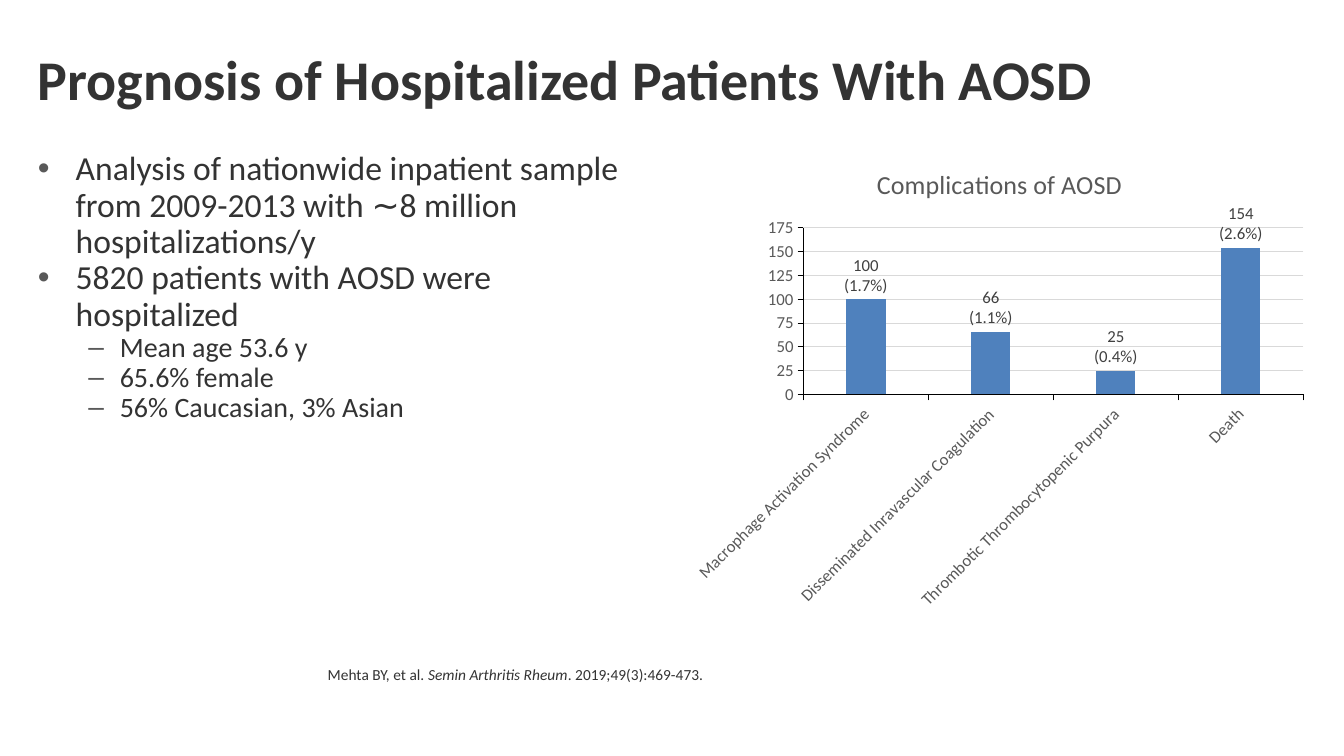
from lxml import etree
from pptx import Presentation
from pptx.chart.data import CategoryChartData
from pptx.dml.color import RGBColor
from pptx.enum.chart import XL_CHART_TYPE, XL_LABEL_POSITION, XL_TICK_MARK
from pptx.enum.text import MSO_ANCHOR
from pptx.oxml import parse_xml
from pptx.oxml.ns import nsdecls, qn
from pptx.util import Pt

COLUMN = XL_CHART_TYPE.COLUMN_CLUSTERED
ABOVE = XL_LABEL_POSITION.OUTSIDE_END
OUT = XL_TICK_MARK.OUTSIDE
NONE = XL_TICK_MARK.NONE
TOP = MSO_ANCHOR.TOP
MIDDLE = MSO_ANCHOR.MIDDLE


def color(code):
    return RGBColor.from_string(code)


class Deck:
    face = "Calibri"
    ink = "333333"
    gray = "595959"
    bar = "4F81BD"
    bullets = [("•", 27, 27, 24), ("–", 58.5, 22.5, 20)]

    def __init__(self, wide, high):
        self.show = Presentation()
        self.show.slide_width = Pt(wide)
        self.show.slide_height = Pt(high)
        self.slide = self.show.slides.add_slide(self.show.slide_layouts[6])

    def style(self, font, size, tint):
        font.name = self.face
        font.size = Pt(size)
        font.color.rgb = color(tint)

    def frame(self, box, anchor=TOP):
        frame = self.slide.shapes.add_textbox(*map(Pt, box)).text_frame
        frame.word_wrap = True
        frame.vertical_anchor = anchor
        return frame

    def put(self, para, text, size, bold=False, italic=False):
        para.line_spacing = 0.9
        run = para.add_run()
        run.text = text
        self.style(run.font, size, self.ink)
        run.font.bold = bold
        run.font.italic = italic

    def title(self, box, text):
        self.put(self.frame(box, MIDDLE).paragraphs[0], text, 40, bold=True)

    def bullet(self, para, level):
        mark, left, hang, size = self.bullets[level]
        para.level = level
        props = para._p.get_or_add_pPr()
        props.set("marL", str(Pt(left)))
        props.set("indent", str(-Pt(hang)))
        tint = etree.SubElement(props, qn("a:buClr"))
        etree.SubElement(tint, qn("a:srgbClr"), val=self.gray)
        etree.SubElement(props, qn("a:buFont"), typeface="Arial")
        etree.SubElement(props, qn("a:buChar"), char=mark)
        return size

    def list(self, box, items):
        frame = self.frame(box)
        for i, (level, text) in enumerate(items):
            para = frame.add_paragraph() if i else frame.paragraphs[0]
            size = self.bullet(para, level)
            self.put(para, text, size)

    def cite(self, box, parts):
        para = self.frame(box).paragraphs[0]
        for text, italic in parts:
            self.put(para, text, 11, italic=italic)

    def axis(self, axis):
        self.style(axis.tick_labels.font, 12, self.gray)
        axis.major_tick_mark = OUT
        axis.minor_tick_mark = NONE
        axis.format.line.color.rgb = color("000000")
        axis.format.line.width = Pt(0.75)

    def label(self, point, lines):
        label = point.data_label
        frame = label.text_frame
        for i, text in enumerate(lines):
            para = frame.add_paragraph() if i else frame.paragraphs[0]
            run = para.add_run()
            run.text = text
            self.style(run.font, 12, "404040")
        label.position = ABOVE

    def place(self, chart, **share):
        parts = "".join(f'<c:{k} val="{v}"/>' for k, v in share.items())
        layout = parse_xml(
            f'<c:layout {nsdecls("c")}><c:manualLayout>'
            '<c:layoutTarget val="inner"/><c:xMode val="edge"/>'
            f'<c:yMode val="edge"/>{parts}</c:manualLayout></c:layout>')
        area = chart._chartSpace.find(".//" + qn("c:plotArea"))
        for old in area.findall(qn("c:layout")):
            area.remove(old)
        area.insert(0, layout)

    def chart(self, box, head, rows):
        data = CategoryChartData()
        data.categories = [name for name, count, share in rows]
        data.add_series("Series 1", [count for name, count, share in rows])
        chart = self.slide.shapes.add_chart(COLUMN, *map(Pt, box), data).chart
        self.style(chart.font, 10, "000000")
        chart.has_legend = False
        chart.has_title = True
        run = chart.chart_title.text_frame.paragraphs[0].add_run()
        run.text = head
        self.style(run.font, 18.6, self.gray)
        run.font.bold = False
        chart.chart_title.include_in_layout = False

        cats, vals = chart.category_axis, chart.value_axis
        self.axis(cats)
        self.axis(vals)
        cats._element.find(".//" + qn("a:bodyPr")).set("rot", "-2700000")
        vals.minimum_scale, vals.maximum_scale = 0, 175
        vals.major_unit = 25
        vals.has_major_gridlines = True
        grid = vals.major_gridlines.format.line
        grid.color.rgb = color("D9D9D9")
        grid.width = Pt(0.75)

        plot = chart.plots[0]
        plot.vary_by_categories = False
        plot.gap_width, plot.overlap = 219, -27
        series = plot.series[0]
        series.format.fill.solid()
        series.format.fill.fore_color.rgb = color(self.bar)
        labels = series.data_labels
        labels.show_value = True
        labels.position = ABOVE
        self.style(labels.font, 12, "404040")
        for i, (name, count, share) in enumerate(rows):
            self.label(series.points[i], [str(count), f"({share}%)"])
        self.place(chart, x=0.19, y=0.17, w=0.79, h=0.35)


def main():
    deck = Deck(960, 540)
    deck.title((20, 13.5, 920, 90), "Prognosis of Hospitalized Patients With AOSD")
    deck.list((20, 105, 452, 340), [
        (0, "Analysis of nationwide inpatient sample from 2009-2013 "
            "with ∼8 million hospitalizations/y"),
        (0, "5820 patients with AOSD were hospitalized"),
        (1, "Mean age 53.6 y"),
        (1, "65.6% female"),
        (1, "56% Caucasian, 3% Asian"),
    ])
    deck.chart((488, 105, 452, 340), "Complications of AOSD", [
        ("Macrophage Activation Syndrome", 100, 1.7),
        ("Disseminated Inravascular Coagulation", 66, 1.1),
        ("Thrombotic Thrombocytopenic Purpura", 25, 0.4),
        ("Death", 154, 2.6),
    ])
    deck.cite((227, 473, 714, 57.5), [
        ("Mehta BY, et al. ", False),
        ("Semin Arthritis Rheum", True),
        (". 2019;49(3):469-473.", False),
    ])
    deck.show.save("out.pptx")


if __name__ == "__main__":
    main()
